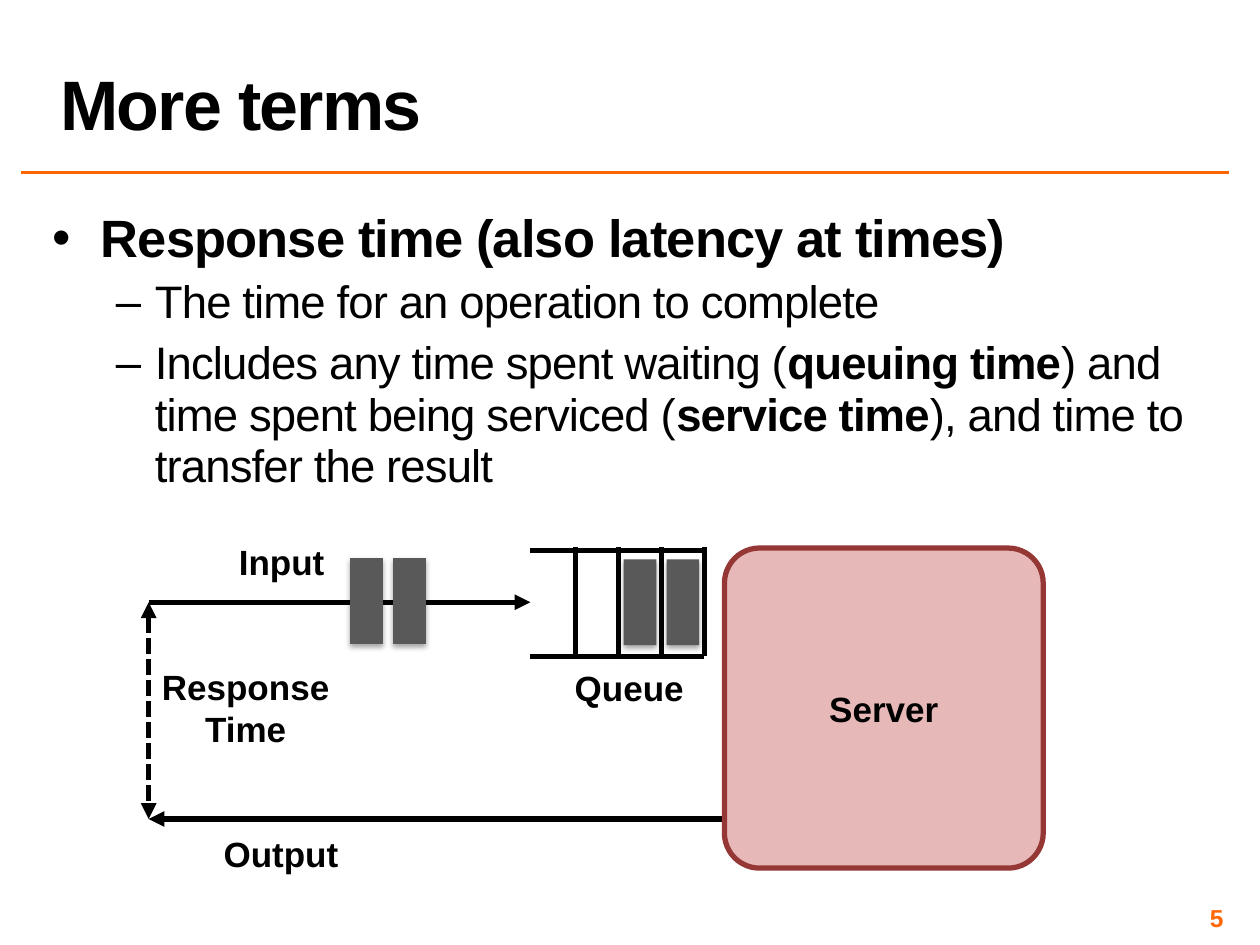
from lxml.etree import SubElement
from pptx import Presentation
from pptx.dml.color import RGBColor
from pptx.enum.dml import MSO_LINE
from pptx.enum.shapes import MSO_CONNECTOR, MSO_SHAPE
from pptx.enum.text import MSO_ANCHOR, PP_ALIGN
from pptx.oxml.ns import qn
from pptx.util import Inches, Pt

THEME = {
    "font": "Arial", "ink": "000000", "accent": "FF6600", "job": "595959",
    "fill": "E6B9B8", "edge": "953735", "line": 3, "rule": 2,
    "title": 40, "head": 30, "item": 26, "label": 20, "number": 14,
}

TITLE = "More terms"
# Each paragraph: level, then (text, bold) parts
BODY = [
    (0, [("Response time (also latency at times)", True)]),
    (1, [("The time for an operation to complete", False)]),
    (1, [("Includes any time spent waiting (", False), ("queuing time", True),
         (") and time spent being serviced (", False), ("service time", True),
         ("), and time to transfer the result", False)]),
]
# Per level: size, bullet, left margin, indent, space before, line spacing
LEVELS = [
    (THEME["head"], "•", 0.38, -0.38, 10, 1.0),
    (THEME["item"], "–", 0.81, -0.31, 5, 0.95),
]
LABELS = [
    ("Input", 1.79, 4.24, 0.89, 0.44),
    ("Response\vTime", 1.18, 5.23, 1.54, 0.77),
    ("Output", 1.67, 6.56, 1.12, 0.44),
    ("Queue", 4.46, 5.24, 1.07, 0.44),
]
LEFT, IN_Y, OUT_Y = 1.18, 4.78, 6.5
QUEUE = {"left": 4.21, "right": 5.59, "top": 4.37, "base": 5.21, "step": 0.34}
JOBS = [(5.29, 4.44), (4.95, 4.44), (2.78, 4.43), (3.12, 4.43)]
JOB_W, JOB_H = 0.26, 0.68
SERVER = (5.75, 4.35, 2.53, 2.54)

deck = Presentation()
deck.slide_width, deck.slide_height = Inches(10), Inches(7.5)
slide = deck.slides.add_slide(deck.slide_layouts[6])
shapes = slide.shapes


def color(name):
    return RGBColor.from_string(THEME[name])


def style(run, size, bold=True, tone="ink", gap=0):
    """Format a run; gap is the letter spacing in points."""
    font = run.font
    font.name, font.size, font.bold = THEME["font"], Pt(size), bold
    font.color.rgb = color(tone)
    if gap:
        run._r.get_or_add_rPr().set("spc", str(int(gap * 100)))


def add_box(x, y, w, h, inset=None, anchor=MSO_ANCHOR.TOP, wrap=True):
    frame = shapes.add_textbox(*map(Inches, (x, y, w, h))).text_frame
    frame.word_wrap, frame.vertical_anchor = wrap, anchor
    if inset is not None:
        frame.margin_left = frame.margin_right = Inches(inset)
        frame.margin_top = frame.margin_bottom = Inches(inset)
    return frame


def write(frame, text, size, align=PP_ALIGN.CENTER, tone="ink", gap=0):
    frame.text = text
    para = frame.paragraphs[0]
    para.alignment = align
    for run in para.runs:
        style(run, size, tone=tone, gap=gap)
    return para


def add_line(x1, y1, x2, y2, tone="ink", width=THEME["line"], heads=()):
    """Draw a line; heads lists the ends with arrows, headEnd before tailEnd."""
    line = shapes.add_connector(MSO_CONNECTOR.STRAIGHT,
                                *map(Inches, (x1, y1, x2, y2)))
    line.line.color.rgb, line.line.width = color(tone), Pt(width)
    SubElement(line._element.spPr, qn("a:effectLst"))
    for end in heads:
        SubElement(line.line._get_or_add_ln(), qn(f"a:{end}"), type="triangle")
    return line


def add_job(x, y):
    job = shapes.add_shape(MSO_SHAPE.RECTANGLE,
                           *map(Inches, (x, y, JOB_W, JOB_H)))
    job.fill.solid()
    job.fill.fore_color.rgb = color("job")
    job.line.fill.background()
    effects = SubElement(job._element.spPr, qn("a:effectLst"))
    shade = SubElement(effects, qn("a:outerShdw"), blurRad=str(Pt(3.1)),
                       dist=str(Pt(1.8)), dir="5400000", rotWithShape="0")
    tint = SubElement(shade, qn("a:srgbClr"), val=THEME["ink"])
    SubElement(tint, qn("a:alpha"), val="35000")


def add_body():
    frame = add_box(0.38, 1.59, 9.37, 5.48, inset=0.04)
    for i, (level, parts) in enumerate(BODY):
        size, mark, margin, indent, before, spacing = LEVELS[level]
        para = frame.add_paragraph() if i else frame.paragraphs[0]
        para.level, para.line_spacing = level, spacing
        para.space_before = Pt(before)
        props = para._p.get_or_add_pPr()
        props.set("marL", str(Inches(margin)))
        props.set("indent", str(Inches(indent)))
        SubElement(props, qn("a:buFont"), typeface=THEME["font"])
        SubElement(props, qn("a:buChar"), char=mark)
        for text, bold in parts:
            run = para.add_run()
            run.text = text
            style(run, size, bold, gap=-0.5)


def add_queue():
    left, right, top, base, step = QUEUE.values()
    for y in (top, base):
        add_line(left, y, right, y)
    for i in range(4):
        x = right - i * step
        add_line(x, top - 0.03, x, base)


def add_server():
    box = shapes.add_shape(MSO_SHAPE.ROUNDED_RECTANGLE, *map(Inches, SERVER))
    box.adjustments[0] = 0.11
    box.shadow.inherit = False
    box.fill.solid()
    box.fill.fore_color.rgb = color("fill")
    box.line.color.rgb, box.line.width = color("edge"), Pt(THEME["line"])
    box.text_frame.vertical_anchor = MSO_ANCHOR.MIDDLE
    write(box.text_frame, "Server", THEME["label"])


add_line(0.17, 1.37, 9.75, 1.37, "accent", THEME["rule"])
head = add_box(0.38, 0.02, 9.37, 1.17, anchor=MSO_ANCHOR.BOTTOM)
write(head, TITLE, THEME["title"], PP_ALIGN.LEFT, gap=-1).line_spacing = 0.8
add_body()
number = add_box(7.42, 7.17, 2.33, 0.23, 0.04, MSO_ANCHOR.MIDDLE)
write(number, "5", THEME["number"], PP_ALIGN.RIGHT, "accent")

add_line(LEFT, IN_Y, QUEUE["left"], IN_Y, heads=["tailEnd"])
add_line(SERVER[0], OUT_Y, LEFT, OUT_Y, heads=["tailEnd"])
span = add_line(LEFT, IN_Y, LEFT, OUT_Y)
span.line.dash_style = MSO_LINE.SQUARE_DOT
for end in ("headEnd", "tailEnd"):
    SubElement(span.line._get_or_add_ln(), qn(f"a:{end}"), type="triangle")
add_queue()
for spot in JOBS:
    add_job(*spot)
for text, *place in LABELS:
    write(add_box(*place, wrap=False), text, THEME["label"])
add_server()

deck.save("out.pptx")
